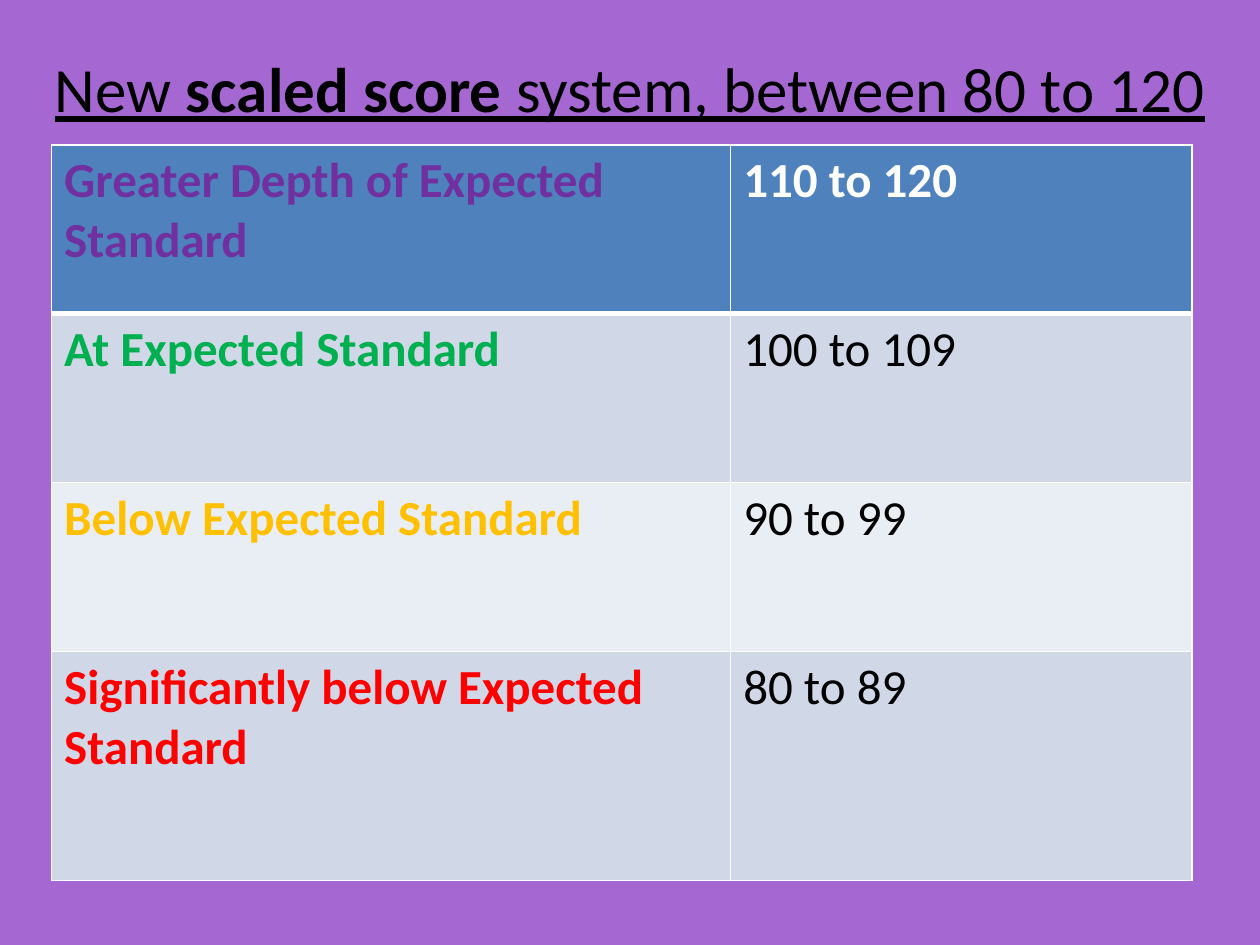
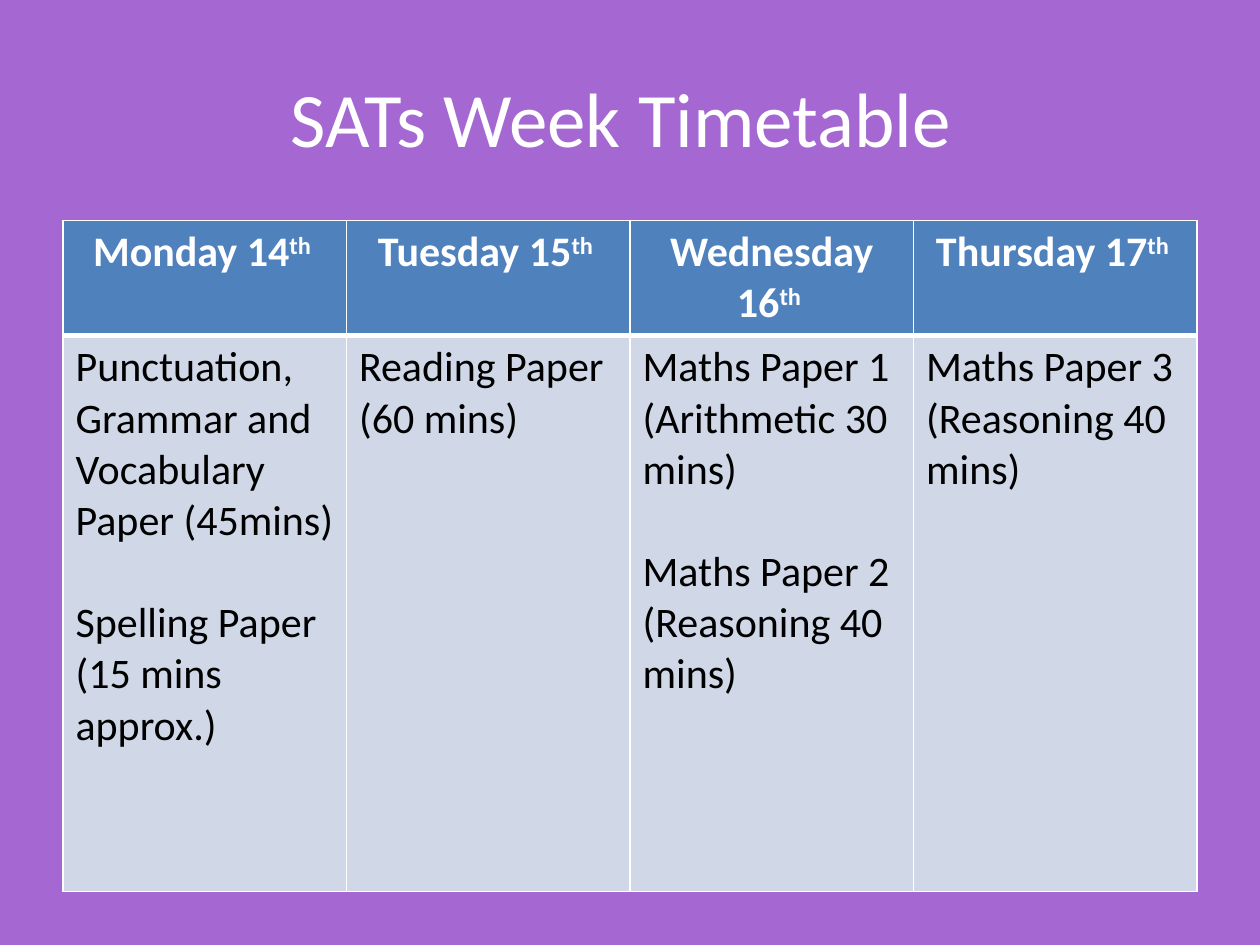
import pptx
import pptx.util
import pptx.dml.color
import pptx.enum.text
import pptx.oxml
import pptx.oxml.ns

Inches = pptx.util.Inches
Pt = pptx.util.Pt
RGBColor = pptx.dml.color.RGBColor
Align = pptx.enum.text.PP_ALIGN
Anchor = pptx.enum.text.MSO_ANCHOR

# Shared colours and font
PURPLE = RGBColor(0xA5, 0x68, 0xD2)
BLUE = RGBColor(0x4F, 0x81, 0xBD)
PALE = RGBColor(0xD0, 0xD8, 0xE8)
LIGHT = RGBColor(0xE9, 0xED, 0xF4)
WHITE = RGBColor(0xFF, 0xFF, 0xFF)
BLACK = RGBColor(0x00, 0x00, 0x00)
VIOLET = RGBColor(0x70, 0x30, 0xA0)
GREEN = RGBColor(0x00, 0xB0, 0x50)
AMBER = RGBColor(0xFF, 0xC0, 0x00)
RED = RGBColor(0xFF, 0x00, 0x00)
FONT = "Calibri"


class Deck:
    def __init__(self):
        self.prs = pptx.Presentation()
        self.prs.slide_width = Inches(10)
        self.prs.slide_height = Inches(7.5)
        self.slide = None

    def add_slide(self):
        self.slide = self.prs.slides.add_slide(self.prs.slide_layouts[5])
        fill = self.slide.background.fill
        fill.solid()
        fill.fore_color.rgb = PURPLE

    def style(self, para, size, color, bold=False, line=False):
        for run in para.runs:
            font = run.font
            font.name, font.size, font.bold = FONT, Pt(size), bold
            font.underline = line
            font.color.rgb = color

    def title(self, box, parts, size, color, line=False):
        """Fill the title; every second part is bold."""
        shape = self.slide.shapes.title
        shape.left, shape.top, shape.width, shape.height = map(Inches, box)
        frame = shape.text_frame
        frame.word_wrap = True
        frame.vertical_anchor = Anchor.MIDDLE
        para = frame.paragraphs[0]
        para.alignment = Align.CENTER
        para.text = parts[0]
        for part in parts[1:]:
            para.add_run().text = part
        self.style(para, size, color, line=line)
        for run in para.runs[1::2]:
            run.font.bold = True

    def table(self, left, top, cols, rows):
        frame = self.slide.shapes.add_table(
            len(rows), len(cols), Inches(left), Inches(top),
            Inches(sum(cols)), Inches(sum(rows)))
        grid = frame.table
        grid.first_row = grid.horz_banding = False
        for col, width in zip(grid.columns, cols):
            col.width = Inches(width)
        for row, height in zip(grid.rows, rows):
            row.height = Inches(height)
        # Heavy rule under the header, fine rules elsewhere
        for r in range(len(rows)):
            for c in range(len(cols)):
                cell = grid.cell(r, c)
                self.border(cell, top=3 if r == 1 else 1,
                            base=3 if r == 0 else 1)
                cell.fill.solid()
                cell.fill.fore_color.rgb = (
                    BLUE if r == 0 else PALE if r % 2 else LIGHT)
        return grid

    def border(self, cell, top, base):
        props = cell._tc.get_or_add_tcPr()
        for side, width in zip("LRTB", (1, 1, top, base)):
            props.append(pptx.oxml.parse_xml(
                f'<a:ln{side} {pptx.oxml.ns.nsdecls("a")} w="{Pt(width)}">'
                f'<a:solidFill><a:srgbClr val="{WHITE}"/></a:solidFill>'
                f'</a:ln{side}>'))

    def label(self, cell, text, size, color, bold=False, gap=0):
        cell.text_frame.text = text
        for i, para in enumerate(cell.text_frame.paragraphs):
            self.style(para, size, color, bold)
            if i:
                para.space_before = Pt(gap)

    def date(self, cell, day, size):
        """Set a centred day with a raised ending."""
        para = cell.text_frame.paragraphs[0]
        para.alignment = Align.CENTER
        para.text = day
        end = para.add_run()
        end.text = "th "
        self.style(para, size, WHITE, bold=True)
        end._r.get_or_add_rPr().set("baseline", "30000")


def scores(deck):
    deck.add_slide()
    deck.title((0, 0, 10, 1.39),
               ["New ", "scaled score ", "system, between 80 to 120"],
               36, BLACK, line=True)
    bands = [
        ("Greater Depth of Expected Standard", VIOLET, "110 to 120"),
        ("At Expected Standard", GREEN, "100 to 109"),
        ("Below Expected Standard", AMBER, "90 to 99"),
        ("Significantly below Expected Standard", RED, "80 to 89"),
    ]
    grid = deck.table(0.41, 1.15, [5.39, 3.66], [1.34] * 3 + [1.82])
    for r, (name, color, score) in enumerate(bands):
        head = r == 0
        deck.label(grid.cell(r, 0), name, 28, color, bold=True)
        deck.label(grid.cell(r, 1), score, 28,
                   WHITE if head else BLACK, bold=head)


def week(deck):
    deck.add_slide()
    deck.title((0.5, 0.3, 9, 1.25), ["SATs Week Timetable "], 44, WHITE)
    days = [
        ("Monday 14", "Punctuation, Grammar and Vocabulary Paper (45mins)\n"
                      "Spelling Paper (15 mins approx.)"),
        ("Tuesday 15", "Reading Paper (60 mins)"),
        ("Wednesday 16", "Maths Paper 1 (Arithmetic 30 mins)\n"
                         "Maths Paper 2 (Reasoning 40 mins)"),
        ("Thursday 17", "Maths Paper 3 (Reasoning 40 mins)"),
    ]
    grid = deck.table(0.5, 1.75, [9 / len(days)] * len(days), [0.9, 4.41])
    for c, (day, papers) in enumerate(days):
        deck.date(grid.cell(0, c), day, 24)
        deck.label(grid.cell(1, c), papers, 24, BLACK, gap=29)


def main():
    deck = Deck()
    scores(deck)
    week(deck)
    deck.prs.save("out.pptx")


if __name__ == "__main__":
    main()
